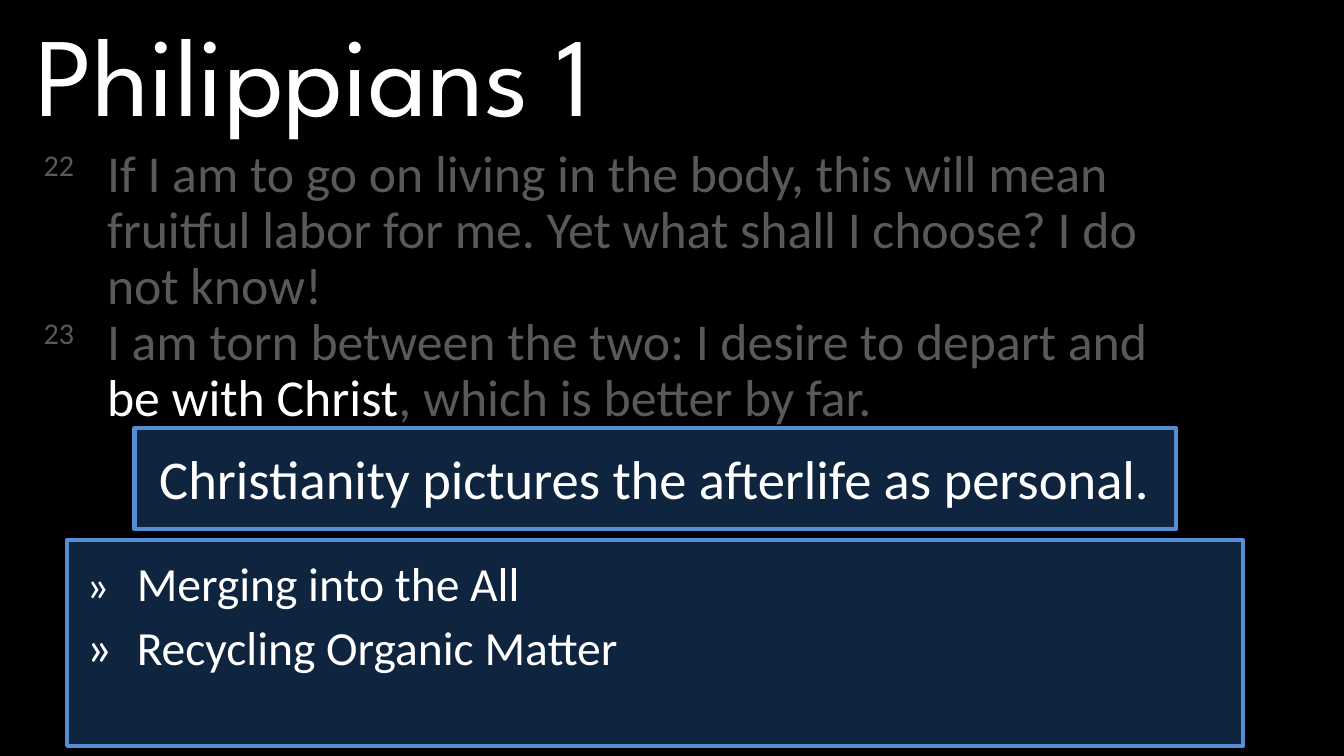
from dataclasses import dataclass

from pptx import Presentation
from pptx.dml.color import RGBColor
from pptx.enum.shapes import MSO_SHAPE
from pptx.enum.text import MSO_ANCHOR, MSO_AUTO_SIZE, PP_ALIGN
from pptx.slide import Slide
from pptx.util import Inches, Pt

# Grid: 160 columns by 90 rows, each cell a twelfth of an inch
COLUMNS, ROWS = 160, 90
CELL = Inches(1) / 12


@dataclass(frozen=True)
class Theme:
    background: str = "000000"
    bright: str = "FFFFFF"
    dimmed: str = "595959"
    panel_fill: str = "0F243E"
    panel_line: str = "558ED5"
    panel_line_width: float = 3
    title_font: str = "League Spartan"
    body_font: str = "Calibri"
    title_size: float = 80
    verse_size: float = 37
    claim_size: float = 39
    view_size: float = 34
    first_mark_size: float = 32
    second_mark_size: float = 36


THEME = Theme()


@dataclass(frozen=True)
class Area:
    column: float
    row: float
    columns: float
    rows: float

    def emu(self) -> list[int]:
        return [round(n * CELL) for n in (self.column, self.row, self.columns, self.rows)]


@dataclass(frozen=True)
class Span:
    text: str
    size: float
    color: str = THEME.bright
    font: str = THEME.body_font
    raised: bool = False


@dataclass(frozen=True)
class TextBlock:
    area: Area
    paragraphs: list[list[Span]]
    indent: float = 0
    line_spacing: float = 1
    space_after: float = 0
    align: PP_ALIGN = PP_ALIGN.LEFT


def verse(number: int, *passages: Span) -> list[Span]:
    marker = Span(f"{number}\u00a0\t".replace("\u00a0", " "), THEME.verse_size, THEME.dimmed, raised=True)
    return [marker, *passages]


def dim(text: str) -> Span:
    return Span(text, THEME.verse_size, THEME.dimmed)


def view(text: str, mark_size: float) -> list[Span]:
    return [Span("»\t", mark_size), Span(text, THEME.view_size)]


def draw_panel(slide: Slide, area: Area) -> None:
    panel = slide.shapes.add_shape(MSO_SHAPE.RECTANGLE, *area.emu())
    panel.shadow.inherit = False
    panel.fill.solid()
    panel.fill.fore_color.rgb = RGBColor.from_string(THEME.panel_fill)
    panel.line.color.rgb = RGBColor.from_string(THEME.panel_line)
    panel.line.width = Pt(THEME.panel_line_width)


def draw_text(slide: Slide, block: TextBlock) -> None:
    frame = slide.shapes.add_textbox(*block.area.emu()).text_frame
    frame.word_wrap = True
    frame.auto_size = MSO_AUTO_SIZE.SHAPE_TO_FIT_TEXT
    frame.vertical_anchor = MSO_ANCHOR.TOP
    for index, spans in enumerate(block.paragraphs):
        paragraph = frame.add_paragraph() if index else frame.paragraphs[0]
        paragraph.alignment = block.align
        paragraph.line_spacing = block.line_spacing
        paragraph.space_after = Pt(block.space_after)
        if block.indent:
            hanging = Inches(block.indent)
            properties = paragraph._p.get_or_add_pPr()
            properties.set("marL", str(hanging))
            properties.set("indent", str(-hanging))
        paragraph.text = spans[0].text
        for span in spans[1:]:
            paragraph.add_run().text = span.text
        for run, span in zip(paragraph.runs, spans):
            run.font.name = span.font
            run.font.size = Pt(span.size)
            run.font.color.rgb = RGBColor.from_string(span.color)
            if span.raised:
                run.font._element.set("baseline", "30000")


# Bible passage
PASSAGE = TextBlock(
    Area(4, 17, 136, 34.8),
    [
        verse(22, dim("If I am to go on living in the body, this will mean fruitful labor "
                      "for me. Yet what shall I choose? I do not know!")),
        verse(23, dim("I am torn between the two: I desire to depart and "),
              Span("be with Christ", THEME.verse_size),
              dim(", which is better by far.")),
    ],
    indent=0.63,
    line_spacing=0.9,
)

# Chapter title
CHAPTER = TextBlock(
    Area(3, 0, 144, 17.4),
    [[Span("Philippians 1", THEME.title_size, font=THEME.title_font)]],
)

# Main claim
CLAIM_PANEL = Area(16, 51, 124, 12)
CLAIM = TextBlock(
    Area(16.7, 52.4, 122.4, 9.1),
    [[Span("Christianity pictures the afterlife as personal.", THEME.claim_size)]],
    space_after=3,
    align=PP_ALIGN.CENTER,
)

# Contrasting views
VIEWS_PANEL = Area(8, 64.3, 140, 24.5)
VIEWS = TextBlock(
    Area(9.1, 65.4, 138.1, 15.8),
    [
        view("Merging into the All", THEME.first_mark_size),
        view("Recycling Organic Matter", THEME.second_mark_size),
    ],
    indent=0.5,
    space_after=3,
)


def main() -> None:
    presentation = Presentation()
    presentation.slide_width = round(COLUMNS * CELL)
    presentation.slide_height = round(ROWS * CELL)
    slide = presentation.slides.add_slide(presentation.slide_layouts[6])
    slide.background.fill.solid()
    slide.background.fill.fore_color.rgb = RGBColor.from_string(THEME.background)

    draw_text(slide, PASSAGE)
    draw_text(slide, CHAPTER)
    for panel, block in ((CLAIM_PANEL, CLAIM), (VIEWS_PANEL, VIEWS)):
        draw_panel(slide, panel)
        draw_text(slide, block)

    presentation.save("out.pptx")


if __name__ == "__main__":
    main()
